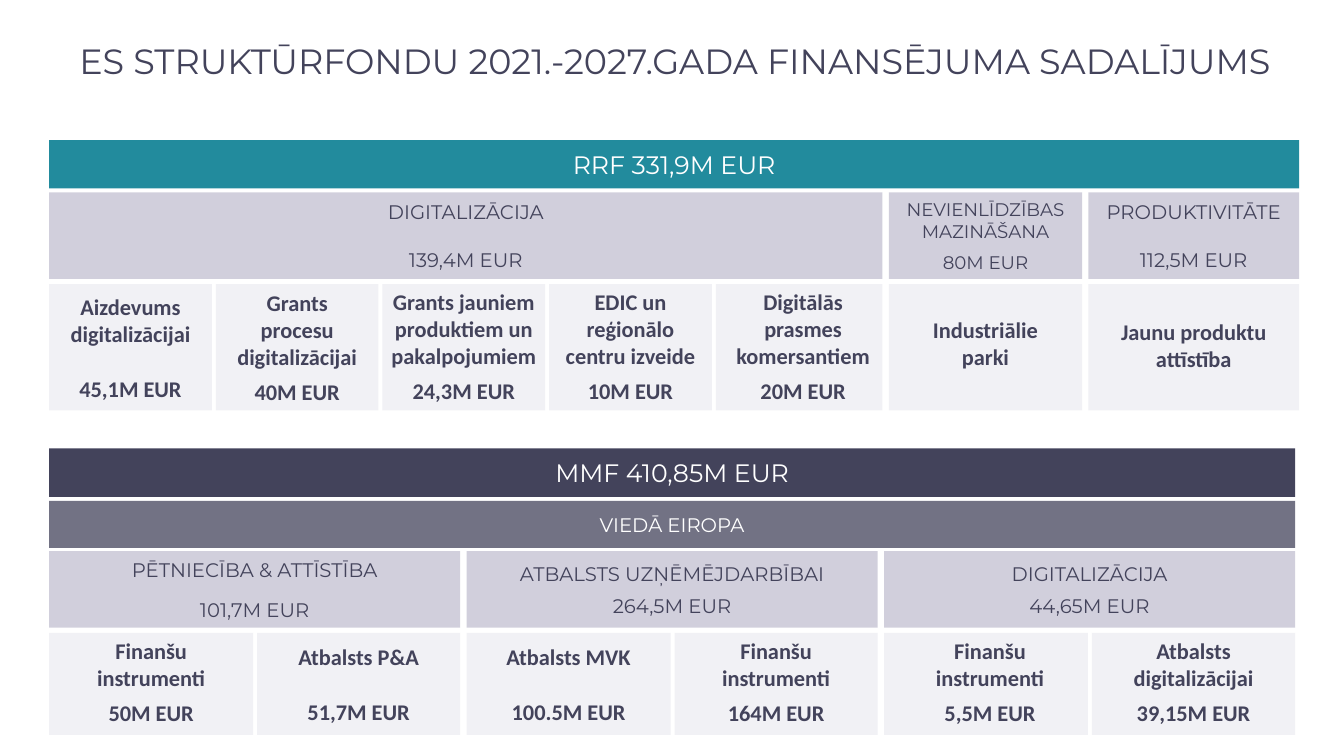
from lxml.etree import SubElement
from pptx import Presentation
from pptx.dml.color import RGBColor
from pptx.enum.shapes import MSO_SHAPE as Shape
from pptx.enum.text import MSO_ANCHOR as Anchor, PP_ALIGN as Align
from pptx.oxml.ns import qn
from pptx.util import Cm, Pt

NAVY, TEAL, LILAC, PALE, WHITE = "43435B", "228B9D", "A4A0BA", "F1F1F5", "FFFFFF"
TOP, MIDDLE = Anchor.TOP, Anchor.MIDDLE
LEFT, PILLAR_GAP, CELL_GAP = 1.24, 0.16, 0.1
NORMAL = (0.25, 0.13, 0.25, 0.13)
NARROW = (0.1, 0.1, 0.1, 0.1)
EVEN = (0.5, 0.1, 0.5, 0.1)
FLAT = (0, 0.1, 0, 0.1)
CLOSE = (0.3, 0.1, 0.3, 0.5)
SKEWED = (0.5, 0.1, 0.3, 0.7)

TITLE = "ES STRUKTŪRFONDU 2021.-2027.GADA FINANSĒJUMA SADALĪJUMS"

# pillar: width, lines, size, space, cells; cell: lines, space, anchor, insets
RRF = [
    (21, ["DIGITALIZĀCIJA", "139,4M EUR"], 14, 18, [
        (["Aizdevums digitalizācijai", "45,1M EUR"], 20, MIDDLE, EVEN),
        (["Grants procesu digitalizācijai", "40M EUR"], 6, MIDDLE, (0.5, 0.5, 0.5, 0.5)),
        (["Grants jauniem produktiem un pakalpojumiem", "24,3M EUR"], 6, TOP, (0, 0.1, 0, 0.5)),
        (["EDIC un reģionālo centru izveide", "10M EUR"], 6, TOP, CLOSE),
        (["Digitālās prasmes komersantiem", "20M EUR"], 6, TOP, SKEWED),
    ]),
    (4.87, ["NEVIENLĪDZĪBAS MAZINĀŠANA", "80M EUR"], 13, 6, [
        (["Industriālie parki"], 0, TOP, (0.5, 0.8, 0.5, 0.5)),
    ]),
    (5.31, ["PRODUKTIVITĀTE", "112,5M EUR"], 14, 18, [
        (["Jaunu produktu attīstība"], 0, MIDDLE, (0.5, 0.4, 0.5, 0.5)),
    ]),
]
MMF = [
    (10.36, ["PĒTNIECĪBA & ATTĪSTĪBA", "101,7M EUR"], 14, 12, [
        (["Finanšu instrumenti", "50M EUR"], 6, TOP, CLOSE),
        (["Atbalsts P&A", "51,7M EUR"], 20, MIDDLE, EVEN),
    ]),
    (10.36, ["ATBALSTS UZŅĒMĒJDARBĪBAI", "264,5M EUR"], 14, 6, [
        (["Atbalsts MVK", "100.5M EUR"], 20, MIDDLE, FLAT),
        (["Finanšu instrumenti", "164M EUR"], 6, TOP, CLOSE),
    ]),
    (10.36, ["DIGITALIZĀCIJA", "44,65M EUR"], 14, 6, [
        (["Finanšu instrumenti", "5,5M EUR"], 6, TOP, SKEWED),
        (["Atbalsts digitalizācijai", "39,15M EUR"], 6, TOP, EVEN),
    ]),
]
# bar: top, width, height, text, size, fill, opacity
BARS = [
    (3.53, 31.5, 1.22, "RRF 331,9M EUR", 18, TEAL, 100),
    (11.3, 31.4, 1.22, "MMF 410,85M EUR", 18, NAVY, 100),
    (12.62, 31.4, 1.19, "VIEDĀ EIROPA", 14, NAVY, 75),
]
# band: pillars, pillar top, pillar height, cell top, cell height, cell pitch
BANDS = [
    (RRF, 4.85, 2.18, 7.16, 3.18, 4.2),
    (MMF, 13.89, 1.93, 15.95, 2.57, 5.24),
]


def rgb(value):
    return RGBColor.from_string(value)


def write(shape, lines, size, color=NAVY, font="Montserrat", bold=False,
          space=0, anchor=MIDDLE, insets=NORMAL, align=Align.CENTER):
    frame = shape.text_frame
    frame.text = "\n".join(lines)
    frame.word_wrap = True
    frame.vertical_anchor = anchor
    (frame.margin_left, frame.margin_top,
     frame.margin_right, frame.margin_bottom) = map(Cm, insets)
    for paragraph in frame.paragraphs:
        paragraph.alignment = align
        paragraph.space_after = Pt(space)
        for run in paragraph.runs:
            run.font.name = font
            run.font.size = Pt(size)
            run.font.bold = bold
            run.font.color.rgb = rgb(color)


def add_box(slide, left, top, width, height, fill, opacity=100):
    shape = slide.shapes.add_shape(Shape.RECTANGLE, Cm(left), Cm(top), Cm(width), Cm(height))
    shape.shadow.inherit = False
    shape.line.fill.background()
    shape.fill.solid()
    shape.fill.fore_color.rgb = rgb(fill)
    if opacity < 100:
        color = shape.fill._xPr.find(".//" + qn("a:srgbClr"))
        SubElement(color, qn("a:alpha"), val=str(opacity * 1000))
    return shape


def add_band(slide, pillars, pillar_top, pillar_height, cell_top, cell_height, pitch):
    left = LEFT
    for width, lines, size, space, cells in pillars:
        pillar = add_box(slide, left, pillar_top, width, pillar_height, LILAC, 50)
        write(pillar, lines, size, space=space, insets=NARROW)
        for index, (cell_lines, cell_space, anchor, insets) in enumerate(cells):
            offset = index * pitch
            is_last = index == len(cells) - 1
            cell_width = width - offset if is_last else pitch - CELL_GAP
            cell = add_box(slide, left + offset, cell_top, cell_width, cell_height, PALE)
            write(cell, cell_lines, 16, font="Calibri", bold=True,
                  space=cell_space, anchor=anchor, insets=insets)
        left += width + PILLAR_GAP


def main():
    presentation = Presentation()
    presentation.slide_width = Cm(33.87)
    presentation.slide_height = Cm(19.05)
    slide = presentation.slides.add_slide(presentation.slide_layouts[6])
    title = slide.shapes.add_textbox(Cm(1.75), Cm(0.86), Cm(30.96), Cm(2.39))
    write(title, [TITLE], 25, anchor=TOP, align=Align.LEFT)
    for top, width, height, text, size, fill, opacity in BARS:
        bar = add_box(slide, LEFT, top, width, height, fill, opacity)
        write(bar, [text], size, WHITE)
    for band in BANDS:
        add_band(slide, *band)
    presentation.save("out.pptx")


if __name__ == "__main__":
    main()
